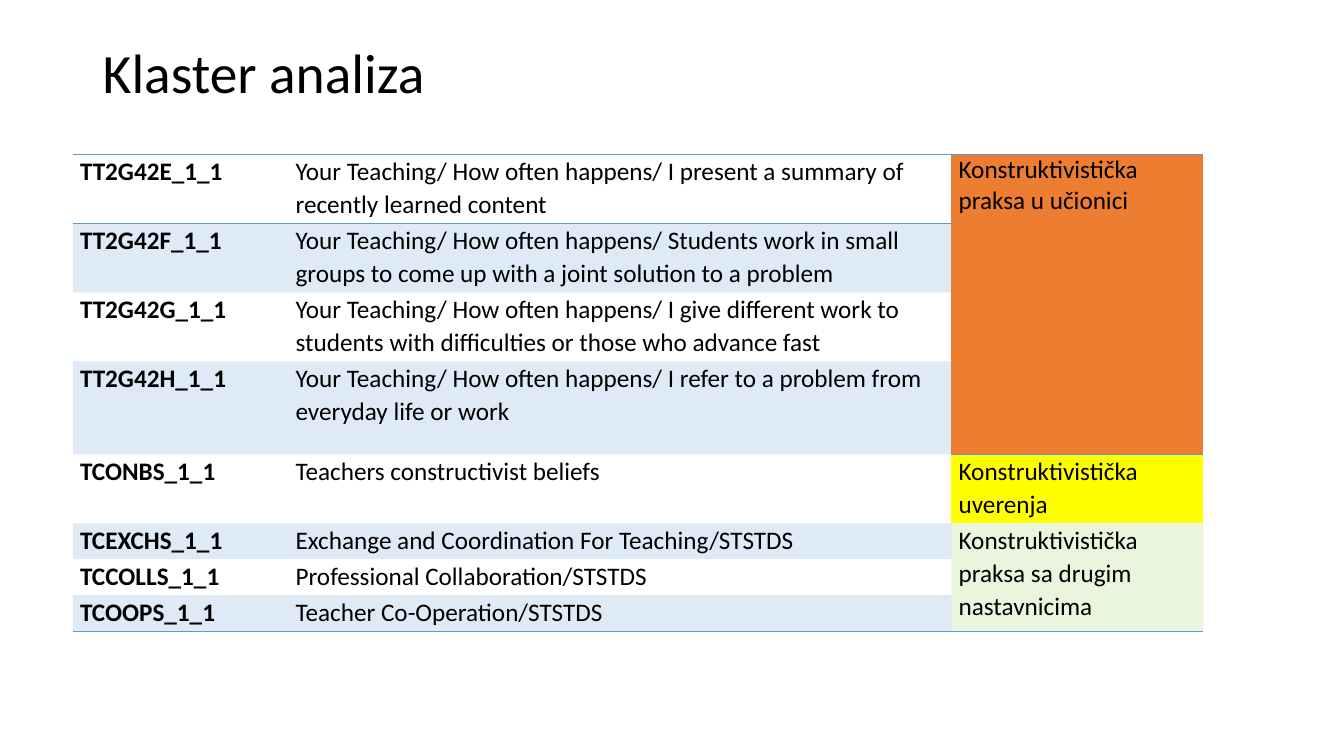
from lxml import etree
from pptx import Presentation
from pptx.dml.color import RGBColor
from pptx.enum import text
from pptx.oxml import ns
from pptx.util import Pt

TITLE = "Klaster analiza"
ITEMS = [
    ("TT2G42E_1_1", "Your Teaching/ How often happens/ I present a summary of recently learned content"),
    ("TT2G42F_1_1", "Your Teaching/ How often happens/ Students work in small groups to come up with a joint solution to a problem"),
    ("TT2G42G_1_1", "Your Teaching/ How often happens/ I give different work to students with difficulties or those who advance fast"),
    ("TT2G42H_1_1", "Your Teaching/ How often happens/ I refer to a problem from everyday life or work"),
    ("TCONBS_1_1", "Teachers constructivist beliefs"),
    ("TCEXCHS_1_1", "Exchange and Coordination For Teaching/STSTDS"),
    ("TCCOLLS_1_1", "Professional Collaboration/STSTDS"),
    ("TCOOPS_1_1", "Teacher Co-Operation/STSTDS"),
]
BLACK = RGBColor(0x00, 0x00, 0x00)
BLUE = RGBColor(0x5B, 0x9B, 0xD5)
ORANGE = RGBColor(0xED, 0x7D, 0x31)
YELLOW = RGBColor(0xFF, 0xFF, 0x00)
GREEN = RGBColor(0x92, 0xD0, 0x50)
CLUSTERS = [
    (0, 3, "Konstruktivistička praksa u učionici", ORANGE, 100, 1.0, ("T", "B")),
    (4, 4, "Konstruktivistička uverenja", YELLOW, 100, 1.07, ()),
    (5, 7, "Konstruktivistička praksa sa drugim nastavnicima", GREEN, 20, 1.07, ("B",)),
]
COLUMNS = [154, 473.6, 180]
ROWS = [49.3, 49.3, 49.3, 66.4, 49.3, 25.7, 25.7, 25.7]
NO_STYLE = "{2D5ABB26-0587-4C30-8999-92F81FD0307C}"


def format_text(tf, size, spacing, bold=False):
    p = tf.paragraphs[0]
    p.alignment = text.PP_ALIGN.LEFT
    p.line_spacing = spacing
    font = p.runs[0].font
    font.name, font.size, font.bold = "Calibri", Pt(size), bold
    font.color.rgb = BLACK


def fill_cell(cell, words, color, opacity, spacing, edges, bold=False):
    cell.text_frame.text = words
    format_text(cell.text_frame, 18, spacing, bold)
    cell.margin_left = cell.margin_right = Pt(5.2)
    cell.margin_top = cell.margin_bottom = 0
    tcPr = cell._tc.get_or_add_tcPr()
    for edge in edges:
        ln = etree.SubElement(tcPr, ns.qn(f"a:ln{edge}"), w=str(Pt(1)))
        solid = etree.SubElement(ln, ns.qn("a:solidFill"))
        etree.SubElement(solid, ns.qn("a:srgbClr"), val=str(BLUE))
    if color is None:
        cell.fill.background()
        return
    cell.fill.solid()
    cell.fill.fore_color.rgb = color
    if opacity < 100:
        clr = tcPr.find(ns.qn("a:solidFill")).find(ns.qn("a:srgbClr"))
        etree.SubElement(clr, ns.qn("a:alpha"), val=str(opacity * 1000))


def main():
    prs = Presentation()
    prs.slide_width, prs.slide_height = Pt(960), Pt(540)
    s = prs.slides.add_slide(prs.slide_layouts[5])

    title = s.shapes.title
    title.left, title.top, title.width, title.height = Pt(66.2), Pt(28.8), Pt(828), Pt(51)
    title.text_frame.text = TITLE
    title.text_frame.vertical_anchor = text.MSO_ANCHOR.MIDDLE
    format_text(title.text_frame, 39.6, 0.9)

    frame = s.shapes.add_table(len(ROWS), len(COLUMNS), Pt(52), Pt(110.2),
                               Pt(sum(COLUMNS)), Pt(sum(ROWS)))
    table = frame.table
    table._tbl.tblPr.find(ns.qn("a:tableStyleId")).text = NO_STYLE
    table.first_row = table.horz_banding = False
    for column, width in zip(table.columns, COLUMNS):
        column.width = Pt(width)
    for row, height in zip(table.rows, ROWS):
        row.height = Pt(height)

    edges = {0: ("T", "B"), len(ITEMS) - 1: ("B",)}
    for i, item in enumerate(ITEMS):
        band = BLUE if i % 2 else None
        for j, words in enumerate(item):
            fill_cell(table.cell(i, j), words, band, 20, 1.07, edges.get(i, ()), bold=j == 0)

    for first, last, words, color, opacity, spacing, lines in CLUSTERS:
        cell = table.cell(first, 2)
        if last > first:
            cell.merge(table.cell(last, 2))
        fill_cell(cell, words, color, opacity, spacing, lines)

    prs.save("out.pptx")


if __name__ == "__main__":
    main()
